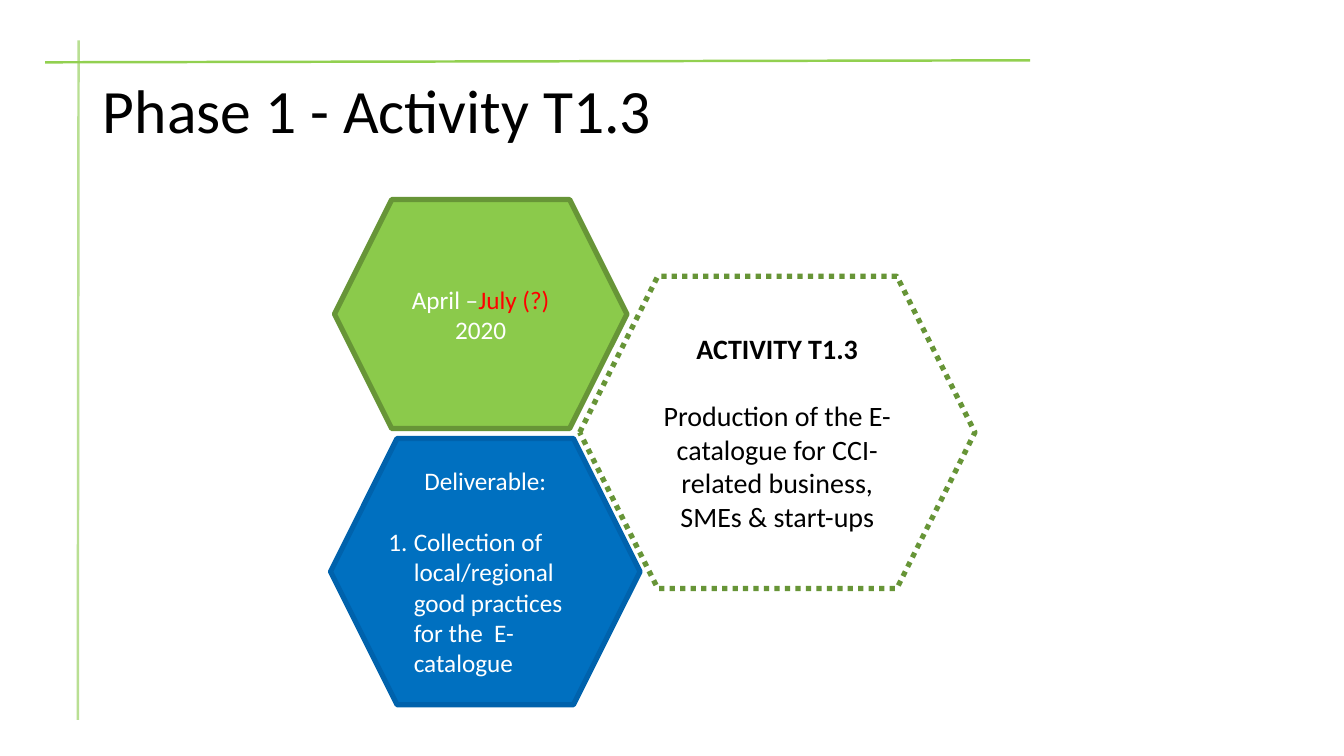
from lxml import etree
from pptx import Presentation
from pptx import util as u
from pptx.dml import color
from pptx.enum import dml, shapes, text
from pptx.oxml import ns

FONT = "Calibri"
WHITE, BLACK, RED = "FFFFFF", "000000", "FF0000"
GREEN, DARK_GREEN, PALE_GREEN, LIME = "8BCA4B", "679537", "B9DF93", "92D050"
BLUE, DARK_BLUE = "0070C0", "0062AC"


def paint(target, value):
    """Give a font, line or shape a solid colour from a hex string."""
    rgb = color.RGBColor.from_string(value)
    if hasattr(target, "fill"):
        target.fill.solid()
        target.fill.fore_color.rgb = rgb
    else:
        target.color.rgb = rgb


def add_span(para, words, size=18, ink=WHITE, bold=False):
    span = para.add_run()
    span.text = words
    span.font.name = FONT
    span.font.size = u.Pt(size)
    span.font.bold = bold
    paint(span.font, ink)


def add_para(box, words="", first=False, before=0, align=text.PP_ALIGN.CENTER, **style):
    frame = box.text_frame
    para = frame.paragraphs[0] if first else frame.add_paragraph()
    para.alignment = align
    if before:
        para.space_before = u.Pt(before)
    if words:
        add_span(para, words, **style)
    return para


def number(para, indent):
    """Turn a paragraph into a numbered item with a hanging indent."""
    properties = para._p.get_or_add_pPr()
    properties.set("marL", str(indent))
    properties.set("indent", str(-indent))
    bullet = etree.SubElement(properties, ns.qn("a:buAutoNum"))
    bullet.set("type", "arabicPeriod")


def add_rule(page, start, end, ink):
    ends = [u.Cm(value) for value in (*start, *end)]
    rule = page.shapes.add_connector(shapes.MSO_CONNECTOR.STRAIGHT, *ends)
    paint(rule.line, ink)
    rule.line.width = u.Pt(1.75)
    etree.SubElement(rule._element.spPr, ns.qn("a:effectLst"))


def add_hexagon(page, left, top, width, height, edge, fill=None, dash=None):
    place = [u.Cm(value) for value in (left, top, width, height)]
    hexagon = page.shapes.add_shape(shapes.MSO_SHAPE.HEXAGON, *place)
    hexagon.shadow.inherit = False
    if fill:
        paint(hexagon, fill)
    else:
        hexagon.fill.background()
    hexagon.line.color.rgb = color.RGBColor.from_string(edge)
    hexagon.line.width = u.Pt(3.75)
    if dash:
        hexagon.line.dash_style = dash
    hexagon.text_frame.word_wrap = True
    hexagon.text_frame.vertical_anchor = text.MSO_ANCHOR.MIDDLE
    return hexagon


def set_title(page, words):
    title = page.shapes.title
    title.left, title.top = u.Cm(2.34), u.Cm(1.02)
    title.width, title.height = u.Cm(29.21), u.Cm(3.68)
    title.text_frame.auto_size = text.MSO_AUTO_SIZE.NONE
    title.text_frame.word_wrap = True
    title.text_frame.vertical_anchor = text.MSO_ANCHOR.MIDDLE
    para = add_para(title, words, first=True, align=text.PP_ALIGN.LEFT, size=44, ink=BLACK)
    para.line_spacing = 0.9


def main():
    deck = Presentation()
    deck.slide_width, deck.slide_height = u.Cm(33.87), u.Cm(19.05)
    page = deck.slides.add_slide(deck.slide_layouts.get_by_name("Title Only"))

    add_rule(page, (1.98, 1.02), (1.96, 18.14), PALE_GREEN)
    add_rule(page, (1.14, 1.57), (25.96, 1.52), LIME)
    set_title(page, "Phase 1 - Activity T1.3")

    activity = add_hexagon(page, 14.61, 6.96, 9.96, 7.87, DARK_GREEN,
                           dash=dml.MSO_LINE.ROUND_DOT)
    add_para(activity, "ACTIVITY T1.3", first=True, size=20, ink=BLACK, bold=True)
    add_para(activity, "Production of the E-catalogue for CCI-related business, SMEs & start-ups",
             before=24, size=20, ink=BLACK)

    period = add_hexagon(page, 8.43, 5.03, 7.37, 5.77, DARK_GREEN, fill=GREEN)
    months = add_para(period, "April –", first=True)
    add_span(months, "July (?)", ink=RED)
    add_para(period, "2020")

    deliverable = add_hexagon(page, 8.33, 11.05, 7.8, 6.71, DARK_BLUE, fill=BLUE)
    add_para(deliverable, "Deliverable:", first=True)
    item = add_para(deliverable, before=22, align=text.PP_ALIGN.LEFT)
    number(item, u.Cm(0.64))
    add_span(item, "Collection of local/regional good practices for the  E-catalogue")

    deck.save("out.pptx")


if __name__ == "__main__":
    main()
